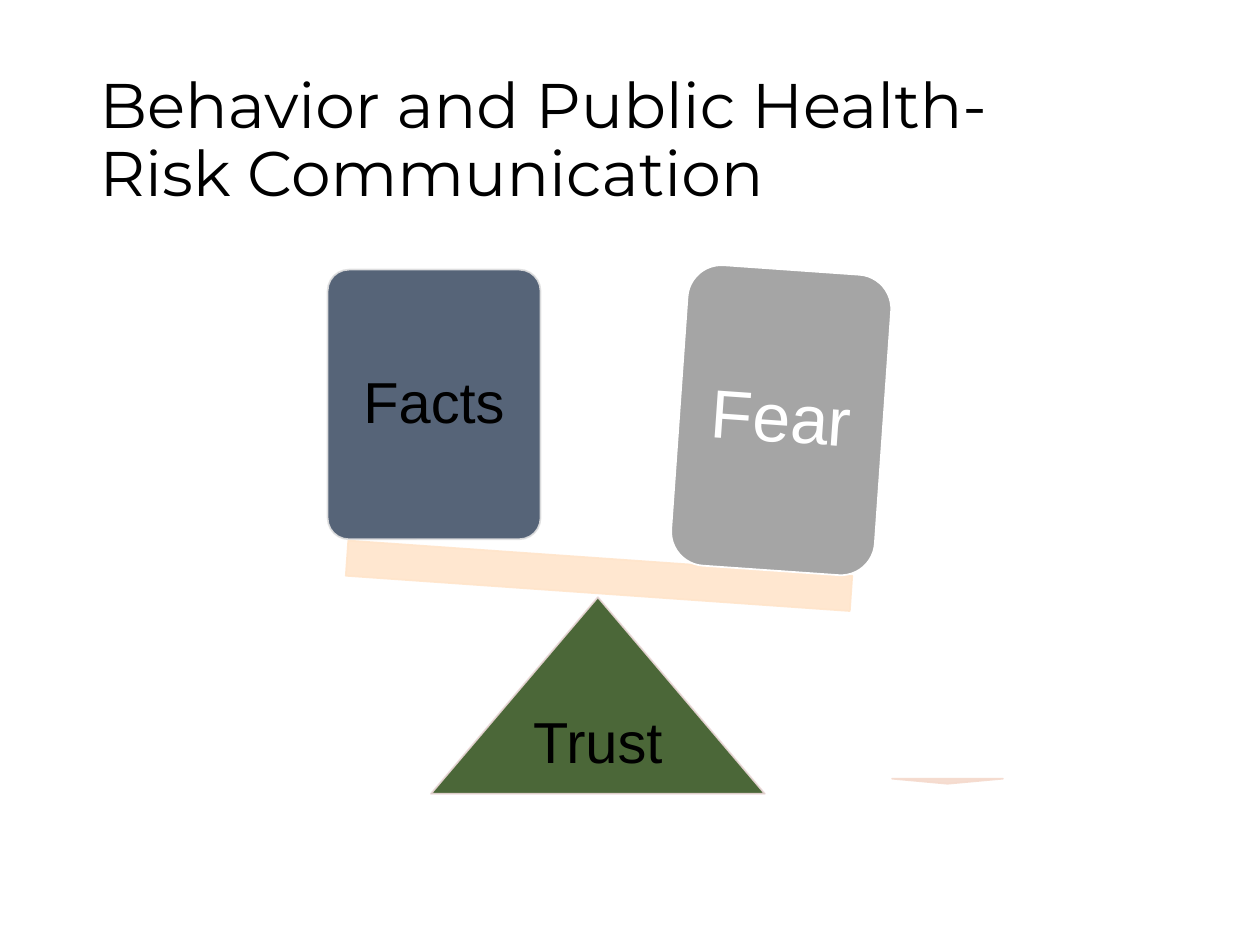
from lxml import etree
from pptx import Presentation
from pptx.dml.color import RGBColor
from pptx.enum.shapes import MSO_SHAPE
from pptx.enum.text import MSO_ANCHOR, PP_ALIGN
from pptx.oxml.ns import qn
from pptx.util import Inches, Pt

ROUND = MSO_SHAPE.ROUNDED_RECTANGLE
TRIANGLE = MSO_SHAPE.ISOSCELES_TRIANGLE
RECT = MSO_SHAPE.RECTANGLE
MIDDLE = MSO_ANCHOR.MIDDLE
LEFT, CENTER = PP_ALIGN.LEFT, PP_ALIGN.CENTER

BLACK = RGBColor(0x00, 0x00, 0x00)
WHITE = RGBColor(0xFF, 0xFF, 0xFF)
SLATE = RGBColor(0x44, 0x54, 0x6A)
GREEN = RGBColor(0x38, 0x57, 0x23)
GRAY = RGBColor(0xA5, 0xA5, 0xA5)
SAND = RGBColor(0xFF, 0xE5, 0xCB)
BLUSH = RGBColor(0xF5, 0xDA, 0xCD)
SILVER = RGBColor(0xE1, 0xE1, 0xE1)
ROSE = RGBColor(0xEC, 0xD9, 0xD9)

TILT = 4


def fade(fill, percent):
    for color in fill.iter(qn("a:srgbClr")):
        alpha = etree.SubElement(color, qn("a:alpha"))
        alpha.set("val", str(percent * 1000))


def place(part, box):
    part.left, part.top, part.width, part.height = map(Inches, box)


def write(part, text, font, size, color, align):
    frame = part.text_frame
    frame.word_wrap = True
    frame.vertical_anchor = MIDDLE
    frame.text = text
    for line in frame.paragraphs:
        line.alignment = align
        line.line_spacing = 0.9
        for run in line.runs:
            run.font.name = font
            run.font.size = Pt(size)
            run.font.color.rgb = color


def draw_part(slide, kind, box, fill, edge, turn=0, clear=True):
    part = slide.shapes.add_shape(kind, *map(Inches, box))
    part.shadow.inherit = False
    part.rotation = turn
    part.fill.solid()
    part.fill.fore_color.rgb = fill
    part.line.color.rgb = edge
    part.line.width = Pt(1)
    if clear:
        fade(part._element.spPr, 90)
    return part


def add_title(slide, box):
    title = slide.shapes.title
    place(title, box)
    write(title, "Behavior and Public Health-\vRisk Communication",
          "Montserrat", 36, BLACK, LEFT)


def add_scale(slide, box):
    x, y, width, height = box
    facts = draw_part(slide, ROUND, (x, y, 1.69, 2.14), SLATE, SILVER)
    facts.adjustments[0] = 0.1
    write(facts, "Facts", "Arial", 33, BLACK, CENTER)

    trust = draw_part(slide, TRIANGLE, (x + 0.82, y + height - 1.56, 2.65, 1.56),
                      GREEN, ROSE)
    write(trust, "Trust", "Arial", 33, BLACK, CENTER)

    draw_part(slide, TRIANGLE, (x + width - 0.88, y + 4.04, 0.88, 0.04),
              BLUSH, BLUSH, 180)
    draw_part(slide, RECT, (x + 0.15, y + 2.29, 4.01, 0.28), SAND, SAND, TILT)

    fear = draw_part(slide, ROUND, (x + 2.79, y, 1.62, 2.39), GRAY, WHITE,
                     TILT, False)
    write(fear, "Fear", "Arial", 39, WHITE, CENTER)


def main():
    deck = Presentation()
    deck.slide_width, deck.slide_height = Inches(10), Inches(7.5)
    slide = deck.slides.add_slide(deck.slide_layouts[5])
    add_title(slide, (0.69, 0.4, 8.62, 1.45))
    add_scale(slide, (2.6, 2.14, 5.36, 4.16))
    deck.save("out.pptx")


if __name__ == "__main__":
    main()
